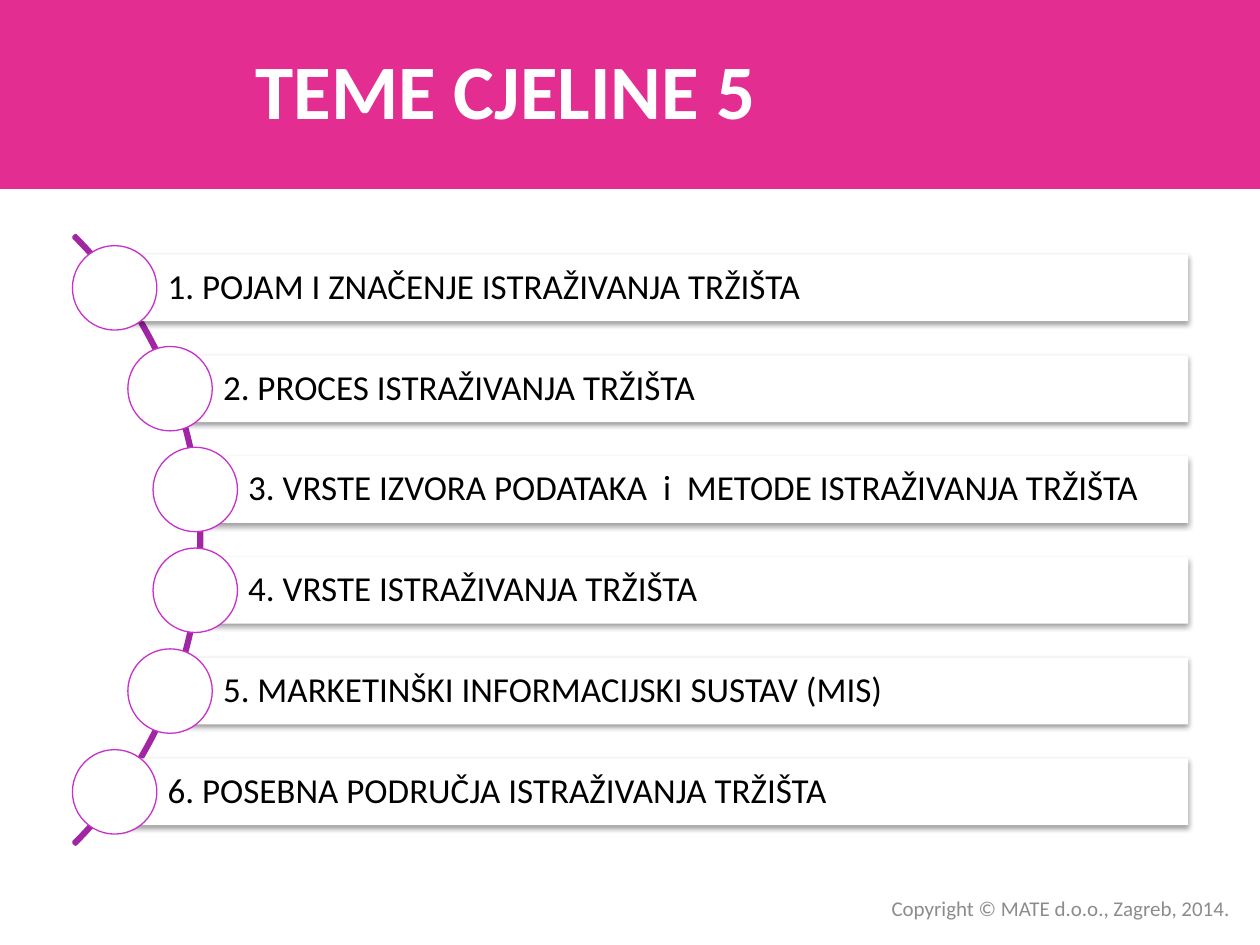
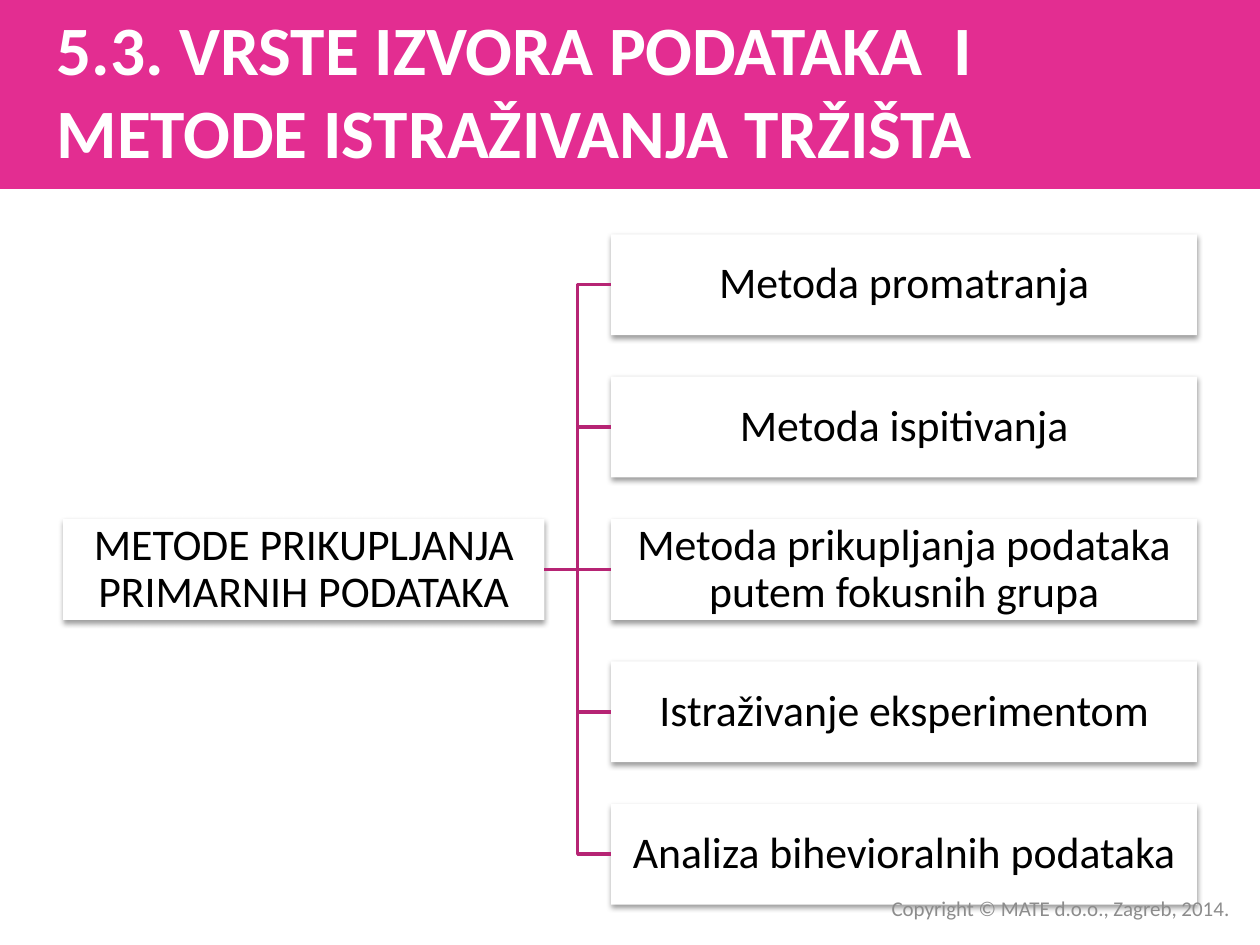
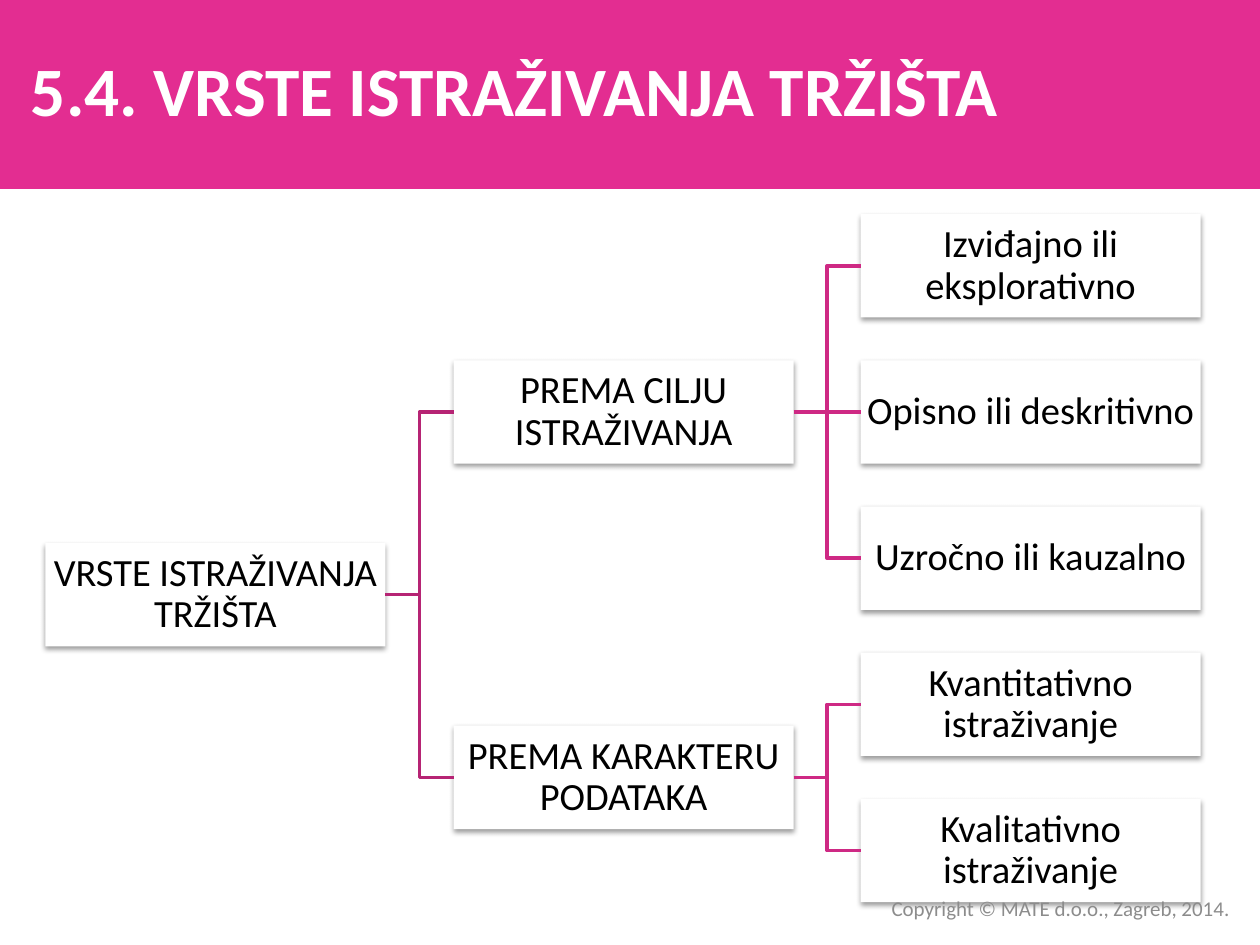
from lxml import etree
from pptx import Presentation
from pptx.dml.color import RGBColor
from pptx.enum.shapes import MSO_CONNECTOR, MSO_SHAPE
from pptx.enum.text import MSO_ANCHOR, PP_ALIGN
from pptx.oxml.ns import qn
from pptx.util import Inches, Pt

RECTANGLE, OVAL, ARC = MSO_SHAPE.RECTANGLE, MSO_SHAPE.OVAL, MSO_SHAPE.BLOCK_ARC
STRAIGHT, ELBOW = MSO_CONNECTOR.STRAIGHT, MSO_CONNECTOR.ELBOW
LEFT, CENTER, RIGHT = PP_ALIGN.LEFT, PP_ALIGN.CENTER, PP_ALIGN.RIGHT
MIDDLE = MSO_ANCHOR.MIDDLE
LEFT_SIDE, RIGHT_SIDE = 1, 3

FONT = "Calibri"
PINK, WHITE, BLACK, GRAY = "E32D91", "FFFFFF", "000000", "8C8C8C"
ARC_PURPLE, RING_PURPLE = "A026A3", "C830CC"
LEVEL_COLORS = ["B62474", "CE2984"]
COPYRIGHT = "Copyright © MATE d.o.o., Zagreb, 2014."

TOPICS = [
    "1. POJAM I ZNAČENJE ISTRAŽIVANJA TRŽIŠTA",
    "2. PROCES ISTRAŽIVANJA TRŽIŠTA",
    "3. VRSTE IZVORA PODATAKA  i  METODE ISTRAŽIVANJA TRŽIŠTA",
    "4. VRSTE ISTRAŽIVANJA TRŽIŠTA",
    "5. MARKETINŠKI INFORMACIJSKI SUSTAV (MIS)",
    "6. POSEBNA PODRUČJA ISTRAŽIVANJA TRŽIŠTA",
]
COLLECTION_METHODS = ("METODE PRIKUPLJANJA PRIMARNIH PODATAKA", [
    ("Metoda promatranja", []),
    ("Metoda ispitivanja", []),
    ("Metoda prikupljanja podataka putem fokusnih grupa", []),
    ("Istraživanje eksperimentom", []),
    ("Analiza bihevioralnih podataka", []),
])
RESEARCH_TYPES = ("VRSTE ISTRAŽIVANJA TRŽIŠTA", [
    ("PREMA CILJU ISTRAŽIVANJA", [
        ("Izviđajno ili eksplorativno", []),
        ("Opisno ili deskritivno", []),
        ("Uzročno ili kauzalno", []),
    ]),
    ("PREMA KARAKTERU PODATAKA", [
        ("Kvantitativno istraživanje", []),
        ("Kvalitativno istraživanje", []),
    ]),
])


def color(value):
    return RGBColor.from_string(value)


class SlideBuilder:
    def __init__(self):
        self.deck = Presentation()
        self.deck.slide_width, self.deck.slide_height = Inches(10), Inches(7.5)
        self.page = None

    def start(self, title, size):
        self.page = self.deck.slides.add_slide(self.deck.slide_layouts[6])
        self.shape(RECTANGLE, 0, 0, 10, 1.5, fill=PINK)
        self.label(title, 0, 0.08, 8.17, 1.25, size, WHITE, CENTER, bold=True)

    def footer(self):
        self.label(COPYRIGHT, 4.69, 7.06, 5.17, 0.3, 12, GRAY, RIGHT)

    def shape(self, kind, left, top, width, height, fill=None, line=None, line_width=1):
        shape = self.page.shapes.add_shape(
            kind, Inches(left), Inches(top), Inches(width), Inches(height))
        shape.shadow.inherit = False
        if fill:
            shape.fill.solid()
            shape.fill.fore_color.rgb = color(fill)
        else:
            shape.fill.background()
        if line:
            shape.line.color.rgb = color(line)
            shape.line.width = Pt(line_width)
        else:
            shape.line.fill.background()
        return shape

    def set_text(self, shape, text, size, ink, align, bold=False, spacing=None,
                 insets=(0.1, 0.05, 0.1, 0.05)):
        """Fill a shape with one paragraph; insets run left, top, right, bottom."""
        frame = shape.text_frame
        frame.word_wrap = True
        frame.vertical_anchor = MIDDLE
        (frame.margin_left, frame.margin_top,
         frame.margin_right, frame.margin_bottom) = map(Inches, insets)
        para = frame.paragraphs[0]
        para.text = text
        para.alignment = align
        if spacing:
            para.line_spacing = spacing
        para.font.name, para.font.size, para.font.bold = FONT, Pt(size), bold
        para.font.color.rgb = color(ink)

    def label(self, text, left, top, width, height, size, ink, align, bold=False):
        box = self.page.shapes.add_textbox(
            Inches(left), Inches(top), Inches(width), Inches(height))
        self.set_text(box, text, size, ink, align, bold)

    def card(self, text, left, top, width, height, size, align, insets):
        """Draw a white box with a soft shadow below it."""
        box = self.shape(RECTANGLE, left, top, width, height, fill=WHITE)
        effects = box._element.spPr.find(qn("a:effectLst"))
        shadow = etree.SubElement(effects, qn("a:outerShdw"), blurRad="40000",
                                  dist="20000", dir="5400000", rotWithShape="0")
        tint = etree.SubElement(shadow, qn("a:srgbClr"), val=BLACK)
        etree.SubElement(tint, qn("a:alpha"), val="38000")
        self.set_text(box, text, size, BLACK, align, spacing=0.9, insets=insets)
        return box

    def join(self, parent, child, ink):
        level = abs(parent.top - child.top) < Inches(0.01)
        link = self.page.shapes.add_connector(STRAIGHT if level else ELBOW, 0, 0, 0, 0)
        link.begin_connect(parent, RIGHT_SIDE)
        link.end_connect(child, LEFT_SIDE)
        link.line.color.rgb = color(ink)
        link.line.width = Pt(2)
        etree.SubElement(link._element.spPr, qn("a:effectLst"))

    def tree(self, root, columns, first_top, pitch, height, size):
        """Stack the leaves at equal steps and centre each parent on its children.

        columns holds the left and width of each level.
        """
        leaf_count = 0

        def place(node, depth):
            nonlocal leaf_count
            text, children = node
            placed = [place(child, depth + 1) for child in children]
            if placed:
                top = (placed[0][1] + placed[-1][1]) / 2
            else:
                top = first_top + pitch * leaf_count
                leaf_count += 1
            left, width = columns[depth]
            box = self.card(text, left, top, width, height, size, CENTER, [0.02] * 4)
            for child, _ in placed:
                self.join(box, child, LEVEL_COLORS[depth])
            return box, top

        place(root, 0)

    def topic_list(self, topics):
        arc = self.shape(ARC, -5.23, 0.87, 6.83, 6.83, line=ARC_PURPLE, line_width=2)
        for index, value in enumerate((189, 27, 0.003)):
            arc.adjustments[index] = value
        upper_lefts = [0.91, 1.35, 1.55]
        right_edge, diameter, pitch = 9.43, 0.67, 0.8
        for row, (topic, left) in enumerate(zip(topics, upper_lefts + upper_lefts[::-1])):
            top = 2.02 + pitch * row
            self.card(topic, left, top, right_edge - left, 0.53, 20, LEFT,
                      (0.42, 0.06, 0.06, 0.06))
            self.shape(OVAL, left - diameter / 2, top - 0.07, diameter, diameter,
                       fill=WHITE, line=RING_PURPLE, line_width=0.75)


def main():
    builder = SlideBuilder()

    builder.start("TEME CJELINE 5 ", 44)
    builder.topic_list(TOPICS)
    builder.footer()

    builder.start("5.3. VRSTE IZVORA PODATAKA  I METODE ISTRAŽIVANJA TRŽIŠTA", 39.6)
    builder.tree(COLLECTION_METHODS, [(0.5, 3.82), (4.85, 4.65)], 1.86, 1.13, 0.8, 25)
    builder.footer()

    builder.start("5.4. VRSTE ISTRAŽIVANJA TRŽIŠTA", 39.6)
    builder.tree(RESEARCH_TYPES, [(0.36, 2.7), (3.6, 2.7), (6.83, 2.7)],
                 1.7, 1.16, 0.82, 22)
    builder.footer()

    builder.deck.save("out.pptx")


if __name__ == "__main__":
    main()
